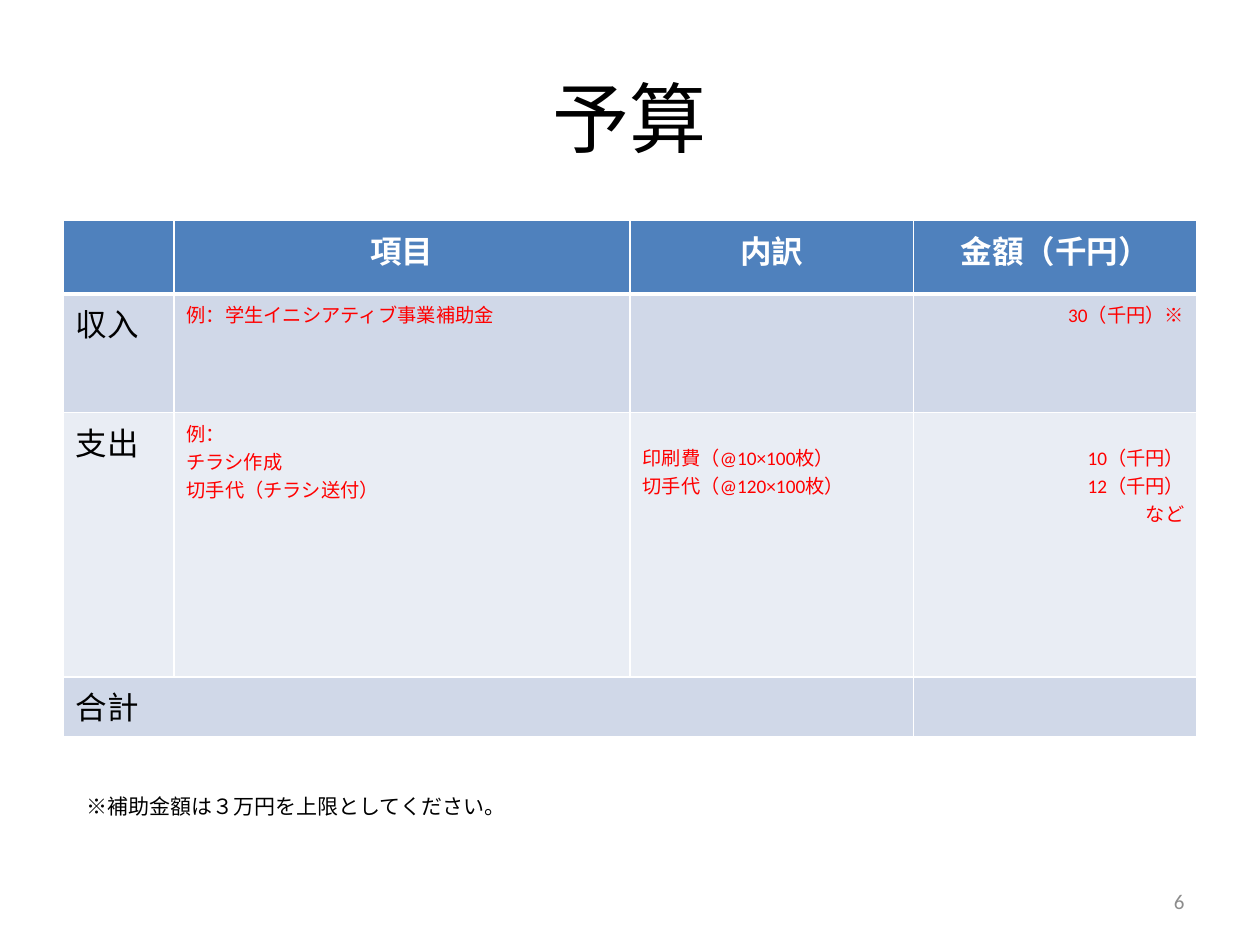
from lxml import etree
from pptx import Presentation
from pptx.dml.color import RGBColor
from pptx.enum import text as t
from pptx.oxml.ns import qn
from pptx.util import Pt

# Content: each cell is a list of lines
TITLE = "予算"
HEADER = ["", "項目", "内訳", "金額（千円）"]
INCOME = ["収入", ["例：学生イニシアティブ事業補助金"], [], ["30（千円）※"]]
EXPENSES = [
    "支出",
    ["例：", "チラシ作成", "切手代（チラシ送付）"],
    ["印刷費（@10×100枚）", "切手代（@120×100枚）"],
    ["10（千円）", "12（千円）", "など"],
]
TOTAL = "合計"
NOTE = "※補助金額は３万円を上限としてください。"
PAGE_NUMBER = "6"

# Look and grid, in points
FONT = "Calibri"
BLACK, WHITE, RED, GREY = "000000", "FFFFFF", "FF0000", "8C8C8C"
ROW_FILLS = ["4F81BD", "D0D8E8", "E9EDF4", "D0D8E8"]
COLUMN_WIDTHS = [63.4, 260.6, 162, 162]
ROW_HEIGHTS = [42, 67.7, 151.2, 34.3]
FIRST_LINE_DROP = 17.3  # lowers the breakdown beneath the "例：" line
LEFT, CENTER, RIGHT = t.PP_ALIGN.LEFT, t.PP_ALIGN.CENTER, t.PP_ALIGN.RIGHT


def color(value):
    return RGBColor.from_string(value)


def write(frame, lines, size=18, fill=BLACK, bold=False, align=LEFT):
    for index, line in enumerate(lines):
        paragraph = frame.add_paragraph() if index else frame.paragraphs[0]
        paragraph.alignment = align
        run = paragraph.add_run()
        run.text = line
        run.font.name = FONT
        run.font.size = Pt(size)
        run.font.bold = bold
        run.font.color.rgb = color(fill)


def set_borders(cell, bottom=1, top=1):
    properties = cell._tc.get_or_add_tcPr()
    widths = {"a:lnL": 1, "a:lnR": 1, "a:lnT": top, "a:lnB": bottom}
    for index, (tag, width) in enumerate(widths.items()):
        line = etree.Element(qn(tag), w=str(Pt(width)))
        fill = etree.SubElement(line, qn("a:solidFill"))
        etree.SubElement(fill, qn("a:srgbClr"), val=WHITE)
        properties.insert(index, line)


def add_text_box(slide, box, line, anchor=t.MSO_ANCHOR.TOP, **style):
    frame = slide.shapes.add_textbox(*map(Pt, box)).text_frame
    frame.word_wrap = True
    frame.vertical_anchor = anchor
    write(frame, [line], **style)


def add_budget_table(slide):
    box = map(Pt, (36, 126, sum(COLUMN_WIDTHS), sum(ROW_HEIGHTS)))
    table = slide.shapes.add_table(len(ROW_HEIGHTS), len(COLUMN_WIDTHS), *box).table
    table.horz_banding = False
    for column, width in zip(table.columns, COLUMN_WIDTHS):
        column.width = Pt(width)
    for row_index, (row, height) in enumerate(zip(table.rows, ROW_HEIGHTS)):
        row.height = Pt(height)
        for cell in row.cells:
            cell.fill.solid()
            cell.fill.fore_color.rgb = color(ROW_FILLS[row_index])
            set_borders(cell, bottom=3 if row_index == 0 else 1,
                        top=3 if row_index == 1 else 1)

    # Header row
    for index, heading in enumerate(HEADER):
        if heading:
            write(table.cell(0, index).text_frame, [heading],
                  fill=WHITE, bold=True, align=CENTER)

    # Income and expenses, amounts to the right
    for row_index, (label, *details) in enumerate([INCOME, EXPENSES], 1):
        write(table.cell(row_index, 0).text_frame, [label])
        for index, lines in enumerate(details, 1):
            write(table.cell(row_index, index).text_frame, lines, size=11,
                  fill=RED, align=RIGHT if index == 3 else LEFT)
    for index in (2, 3):
        table.cell(2, index).margin_top = Pt(FIRST_LINE_DROP)

    # Total row
    table.cell(3, 0).merge(table.cell(3, 2))
    write(table.cell(3, 0).text_frame, [TOTAL])


def main():
    presentation = Presentation()
    presentation.slide_width, presentation.slide_height = Pt(720), Pt(540)
    slide = presentation.slides.add_slide(presentation.slide_layouts[5])

    # Title
    title = slide.shapes.title
    title.left, title.top, title.width, title.height = map(Pt, (36, 21.6, 648, 90))
    title.text_frame.vertical_anchor = t.MSO_ANCHOR.MIDDLE
    write(title.text_frame, [TITLE], size=44, align=CENTER)

    add_budget_table(slide)

    # Page number and note
    add_text_box(slide, (516, 500.5, 168, 28.8), PAGE_NUMBER, size=12, fill=GREY,
                 align=RIGHT, anchor=t.MSO_ANCHOR.MIDDLE)
    add_text_box(slide, (42.5, 450, 255, 21.8), NOTE, size=12)

    presentation.save("out.pptx")


if __name__ == "__main__":
    main()
